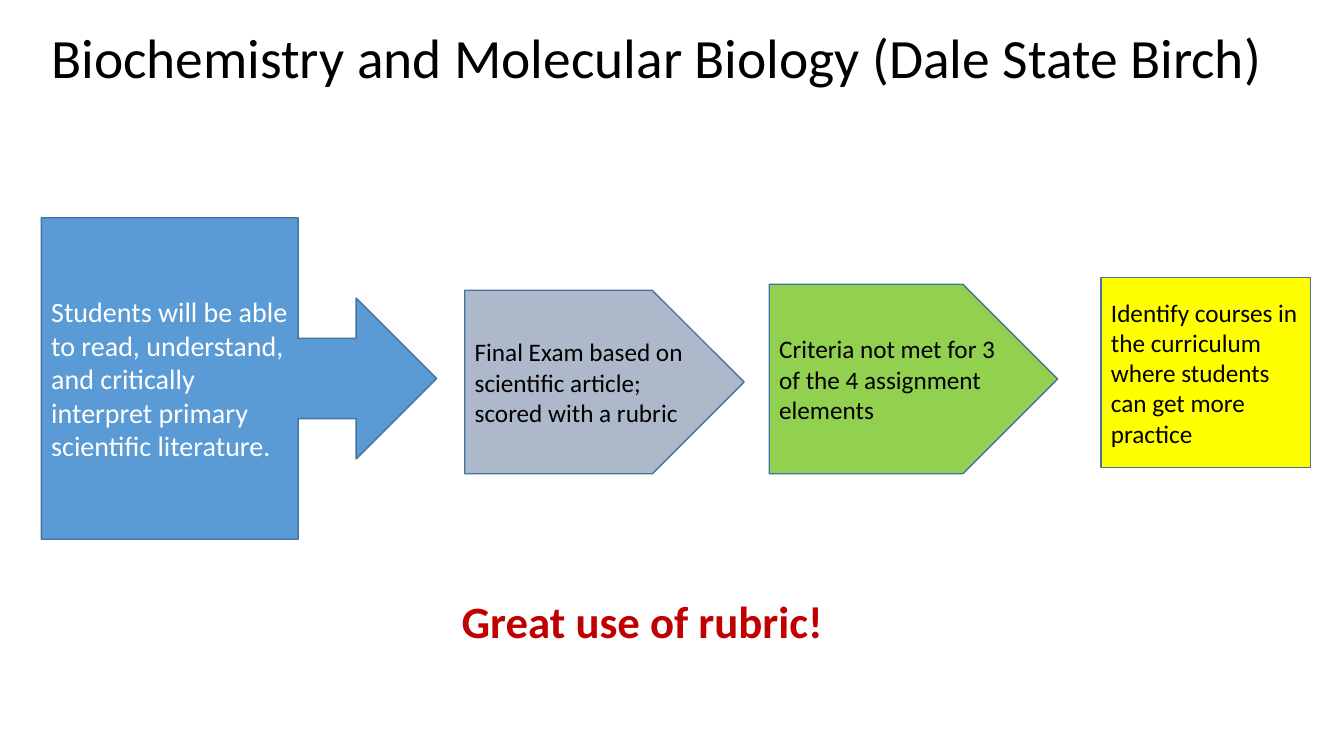
from pptx import Presentation
from pptx.dml.color import RGBColor
from pptx.enum.shapes import MSO_SHAPE
from pptx.enum.text import MSO_ANCHOR, PP_ALIGN
from pptx.util import Inches, Pt

CALLOUT = MSO_SHAPE.RIGHT_ARROW_CALLOUT
PLATE = MSO_SHAPE.PENTAGON
RECT = MSO_SHAPE.RECTANGLE
MIDDLE = MSO_ANCHOR.MIDDLE
LEFT = PP_ALIGN.LEFT

FONT = "Calibri"
COLORS = {
    "black": "000000",
    "white": "FFFFFF",
    "blue": "5B9BD5",
    "edge": "43739E",
    "gray": "ADB9CA",
    "green": "92D050",
    "yellow": "FFFF00",
    "red": "C00000",
}

# kind, left, top, width, height (relative to the flow box), fill, ink, size, text
STEPS = [
    (CALLOUT, 0, 0, 3.92, 3.19, "blue", "white", 20,
     "Students will be able to read, understand, and critically "
     "interpret primary scientific literature."),
    (PLATE, 4.2, 0.72, 2.77, 1.82, "gray", "black", 18,
     "Final Exam based on scientific article; scored with a rubric"),
    (PLATE, 7.22, 0.66, 2.86, 1.88, "green", "black", 18,
     "Criteria not met for 3 of the 4 assignment elements"),
    (RECT, 10.51, 0.59, 2.08, 1.89, "yellow", "black", 18,
     "Identify courses in the curriculum where students can get more practice"),
]


def color(name):
    return RGBColor.from_string(COLORS[name])


def write(shape, text, size=18, ink="black", bold=False, wrap=True, space=1.0):
    """Put left-aligned, vertically centred text into a shape."""
    frame = shape.text_frame
    frame.word_wrap = wrap
    frame.vertical_anchor = MIDDLE
    para = frame.paragraphs[0]
    para.alignment = LEFT
    para.line_spacing = space
    run = para.add_run()
    run.text = text
    font = run.font
    font.name = FONT
    font.size = Pt(size)
    font.bold = bold
    font.color.rgb = color(ink)


def add_label(slide, box, text, **style):
    label = slide.shapes.add_textbox(*map(Inches, box))
    write(label, text, **style)


def add_flow(slide, left, top):
    """Place the four steps relative to the corner of the flow."""
    for kind, x, y, width, height, fill, ink, size, text in STEPS:
        box = (left + x, top + y, width, height)
        step = slide.shapes.add_shape(kind, *map(Inches, box))
        step.shadow.inherit = False
        step.fill.solid()
        step.fill.fore_color.rgb = color(fill)
        step.line.color.rgb = color("edge")
        step.line.width = Pt(1)
        write(step, text, size=size, ink=ink)


def main():
    deck = Presentation()
    deck.slide_width = Inches(13.33)
    deck.slide_height = Inches(7.5)
    slide = deck.slides.add_slide(deck.slide_layouts[6])
    add_label(slide, (0.41, 0.25, 12.81, 0.7),
              "Biochemistry and Molecular Biology (Dale State Birch)",
              size=39.6, space=0.9)
    add_flow(slide, 0.41, 2.16)
    add_label(slide, (4.48, 5.84, 3.82, 0.64), "Great use of rubric!",
              size=32, ink="red", bold=True, wrap=False)
    deck.save("out.pptx")


if __name__ == "__main__":
    main()
